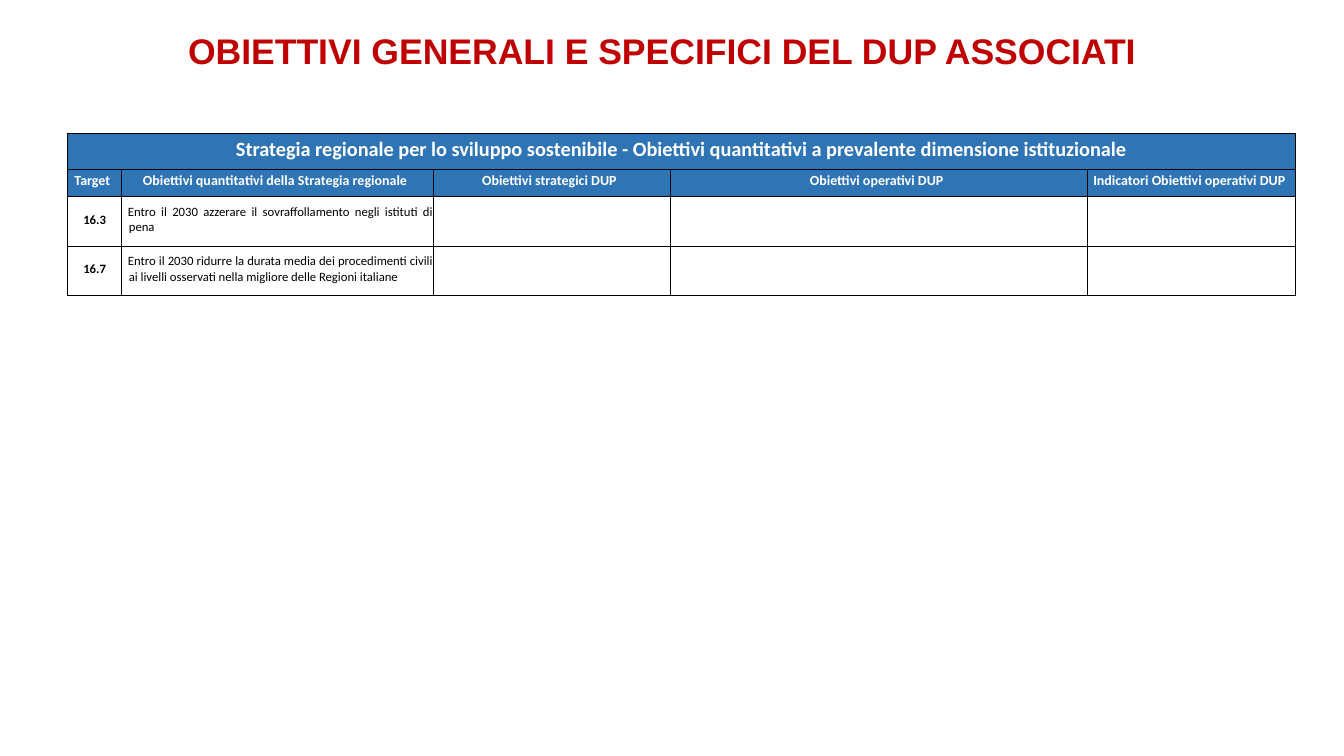
import dataclasses

import pptx
import pptx.dml.color
import pptx.enum.text
import pptx.oxml
import pptx.oxml.ns
import pptx.util

ALIGN = pptx.enum.text.PP_ALIGN
ANCHOR = pptx.enum.text.MSO_ANCHOR
AUTO_SIZE = pptx.enum.text.MSO_AUTO_SIZE

TITLE = "OBIETTIVI GENERALI E SPECIFICI DEL DUP ASSOCIATI"
STRATEGY = ("Strategia regionale per lo sviluppo sostenibile - "
            "Obiettivi quantitativi a prevalente dimensione istituzionale")
HEADERS = [
    "Target",
    "Obiettivi quantitativi della Strategia regionale",
    "Obiettivi strategici DUP",
    "Obiettivi operativi DUP",
    "Indicatori Obiettivi operativi DUP",
]
TARGETS = [
    ("16.3", "Entro il 2030 azzerare il sovraffollamento negli istituti di pena"),
    ("16.7", "Entro il 2030 ridurre la durata media dei procedimenti civili "
             "ai livelli osservati nella migliore delle Regioni italiane"),
]
COL_WIDTHS = [59, 341, 259, 457, 227]
ROW_HEIGHTS = [39, 30, 55, 53]


def px(n):
    """Convert px, at 100 to the inch, into EMU."""
    return pptx.util.Emu(n * 9144)


@dataclasses.dataclass(frozen=True)
class Theme:
    title_font: str = "Arial"
    table_font: str = "Calibri"
    title_color: str = "C00000"
    header_fill: str = "2F75B5"
    header_color: str = "FFFFFF"
    body_color: str = "000000"
    border_color: str = "000000"
    title_size: int = 28
    strategy_size: int = 16
    header_size: int = 11
    body_size: int = 10
    border_width: int = 1


class SlideBuilder:
    def __init__(self, slide, theme):
        self.slide = slide
        self.theme = theme

    def style(self, p, font, size, color, bold=True):
        for r in p.runs:
            r.font.name = font
            r.font.size = pptx.util.Pt(size)
            r.font.bold = bold
            r.font.color.rgb = pptx.dml.color.RGBColor.from_string(color)

    def title(self, text, x, y, w, h):
        sp = self.slide.shapes.title
        sp.left, sp.top, sp.width, sp.height = map(px, (x, y, w, h))
        tf = sp.text_frame
        tf.text = text
        tf.word_wrap = True
        tf.auto_size = AUTO_SIZE.SHAPE_TO_FIT_TEXT
        tf.vertical_anchor = ANCHOR.TOP
        tf.margin_left, tf.margin_right = px(10), px(32)
        tf.margin_top = tf.margin_bottom = px(5)
        p = tf.paragraphs[0]
        p.alignment = ALIGN.CENTER
        p.line_spacing = 1.5
        p.space_after = pptx.util.Pt(6)
        self.style(p, self.theme.title_font, self.theme.title_size,
                   self.theme.title_color)

    def table(self, x, y, col_widths, row_heights):
        """Add a table of bordered, unfilled cells."""
        frame = self.slide.shapes.add_table(
            len(row_heights), len(col_widths), px(x), px(y),
            px(sum(col_widths)), px(sum(row_heights)))
        table = frame.table
        table.first_row = table.horz_banding = False
        for col, width in zip(table.columns, col_widths):
            col.width = px(width)
        for row, height in zip(table.rows, row_heights):
            row.height = px(height)
        for cell in table.iter_cells():
            self.borders(cell)
            cell.fill.background()
        return table

    def borders(self, cell):
        tc_pr = cell._tc.get_or_add_tcPr()
        width = pptx.util.Pt(self.theme.border_width)
        for side in ("lnL", "lnR", "lnT", "lnB"):
            tc_pr.append(pptx.oxml.parse_xml(
                f'<a:{side} {pptx.oxml.ns.nsdecls("a")} w="{width}"><a:solidFill>'
                f'<a:srgbClr val="{self.theme.border_color}"/>'
                f'</a:solidFill></a:{side}>'))

    def cell(self, cell, text, size, color, bold=True, align=ALIGN.CENTER,
             fill=None, right=1):
        cell.text_frame.text = text
        cell.vertical_anchor = ANCHOR.MIDDLE
        cell.margin_left = cell.margin_top = px(1)
        cell.margin_right, cell.margin_bottom = px(right), px(5)
        if fill:
            cell.fill.solid()
            cell.fill.fore_color.rgb = pptx.dml.color.RGBColor.from_string(fill)
        p = cell.text_frame.paragraphs[0]
        p.alignment = align
        self.style(p, self.theme.table_font, size, color, bold)
        return p

    def header_cell(self, cell, text, size, right=1):
        self.cell(cell, text, size, self.theme.header_color,
                  fill=self.theme.header_fill, right=right)

    def goal_cell(self, cell, text):
        p = self.cell(cell, text, self.theme.body_size, self.theme.body_color,
                      bold=False, align=ALIGN.JUSTIFY)
        p_pr = p._p.get_or_add_pPr()
        p_pr.set("marL", str(px(7)))
        p_pr.set("indent", str(px(-1)))


def main():
    prs = pptx.Presentation()
    prs.slide_width, prs.slide_height = px(1470), px(827)
    theme = Theme()
    builder = SlideBuilder(prs.slides.add_slide(prs.slide_layouts[5]), theme)
    builder.title(TITLE, 1, 3, 1468, 72)

    table = builder.table(74, 146, COL_WIDTHS, ROW_HEIGHTS)
    table.cell(0, 0).merge(table.cell(0, len(HEADERS) - 1))
    builder.header_cell(table.cell(0, 0), STRATEGY, theme.strategy_size)
    for col, text in enumerate(HEADERS):
        builder.header_cell(table.cell(1, col), text, theme.header_size, right=6)
    for row, (target, goal) in enumerate(TARGETS, start=2):
        builder.cell(table.cell(row, 0), target, theme.body_size, theme.body_color)
        builder.goal_cell(table.cell(row, 1), goal)

    prs.save("out.pptx")


if __name__ == "__main__":
    main()
